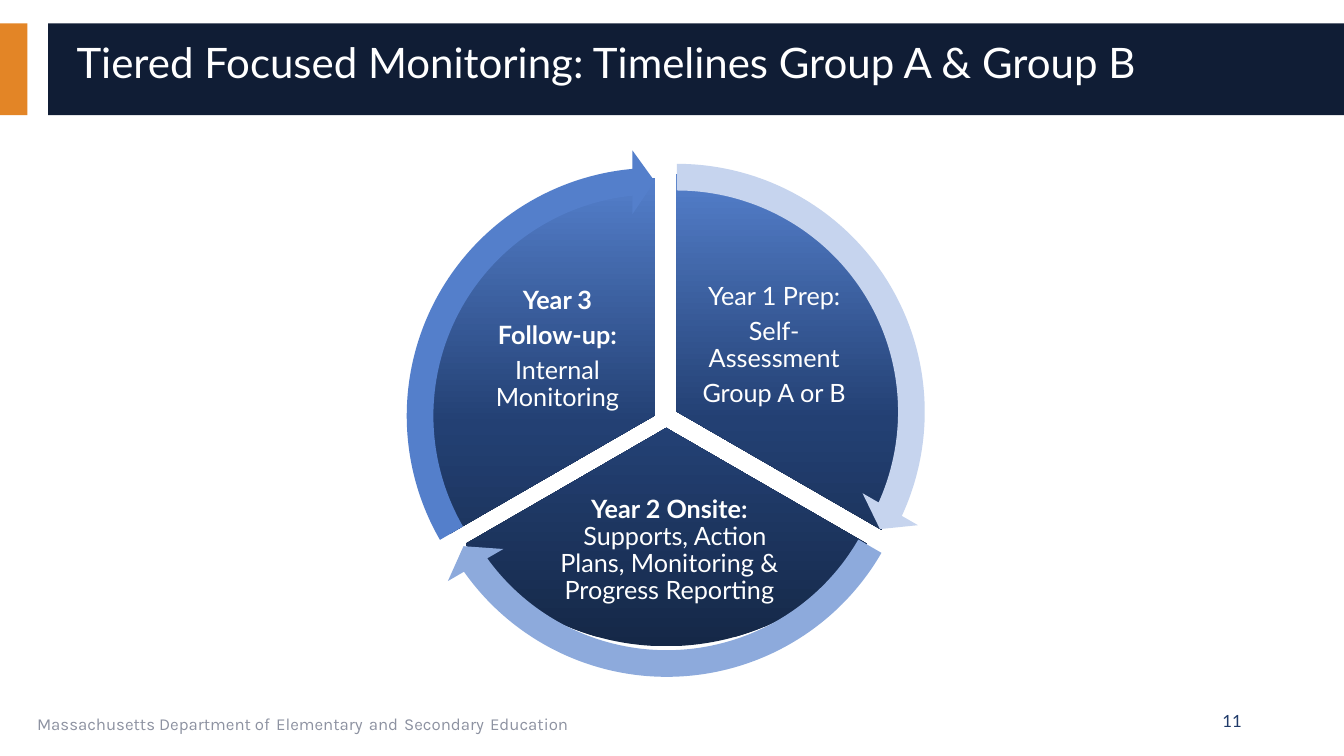
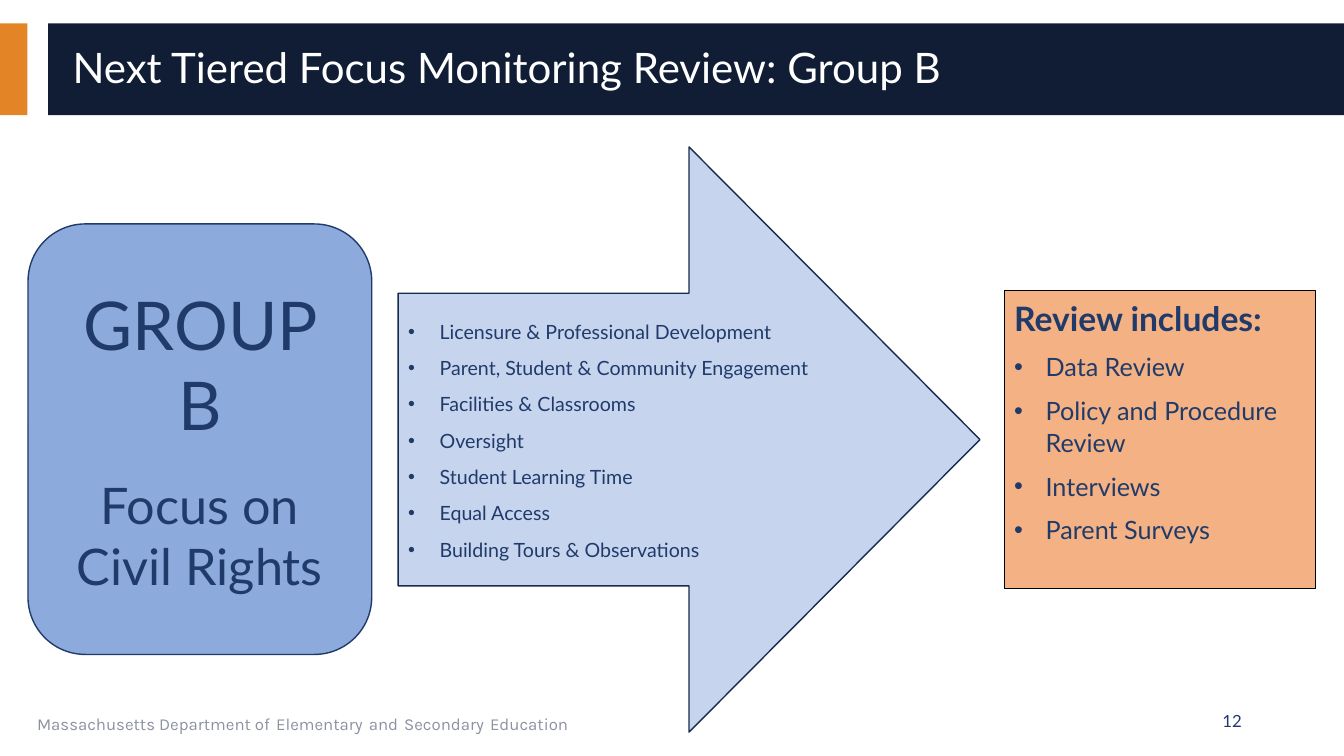
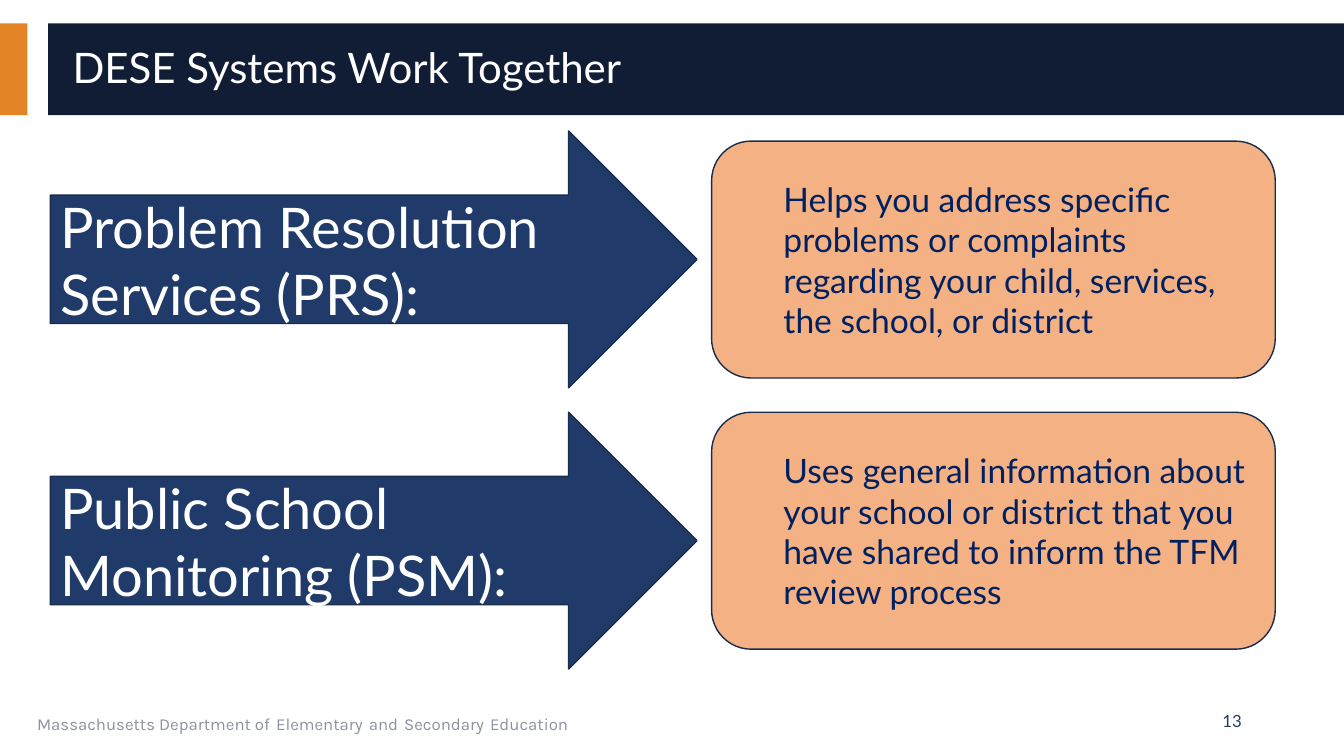
"""Build three slides on tiered focused monitoring."""
from copy import deepcopy
from dataclasses import dataclass
from typing import Any

from lxml import etree
from pptx import Presentation
from pptx import util as u
from pptx.dml.color import RGBColor
from pptx.enum import shapes, text
from pptx.oxml.ns import qn

Pt = u.Pt
SHAPE = shapes.MSO_SHAPE
CENTER, RIGHT = text.PP_ALIGN.CENTER, text.PP_ALIGN.RIGHT
TOP, MIDDLE = text.MSO_ANCHOR.TOP, text.MSO_ANCHOR.MIDDLE
C = {
    "white": "FFFFFF", "orange": "E38526", "band": "101D35", "grey": "8D92A1",
    "navy": "203B6A", "outline": "182C4E", "black": "000000", "ink": "002060",
    "peach": "F4B183", "pale": "C6D4EE", "mid": "8DAADC", "strong": "547FCB",
    "deep": "152847", "blue": "234073",
}
PIE_STOPS = ((0, "deep"), (0.48, "blue"), (1, "strong"))
FULL_TURN, THIRD, TIP = 216, 72, 3.28


@dataclass
class Run:
    """A stretch of text with one size, colour and font."""
    words: str
    size: float = 18
    color: str = "navy"
    bold: bool = False
    font: str = "Lato"


@dataclass
class Para:
    """A paragraph with its spacing, indents and bullet."""
    runs: list[Run]
    align: Any = None
    spacing: float = 1
    before: float = 0
    after: float = 0
    left: float = 0
    indent: float = 0
    bullet: bool = False


@dataclass
class Box:
    """A rectangle in points."""
    x: float
    y: float
    w: float
    h: float

    def place(self) -> tuple[int, ...]:
        return tuple(Pt(v) for v in (self.x, self.y, self.w, self.h))


@dataclass
class Sector:
    """One year of the cycle: pie, label and arrow."""
    start: float
    pie: Box
    label: Box
    arrow: tuple[float, float]
    color: str
    paras: list[Para]


def rgb(name: str) -> RGBColor:
    """Return a named colour."""
    return RGBColor.from_string(C[name])


def apply(obj: Any, fmt: dict[str, Any]) -> None:
    """Set every attribute in a dict of format values."""
    for name, value in fmt.items():
        setattr(obj, name, value)


def write(tf: Any, paras: list[Para], anchor: Any = MIDDLE, inset: float | None = None) -> None:
    """Fill a text frame with paragraphs."""
    apply(tf, {"word_wrap": True, "vertical_anchor": anchor,
               "auto_size": text.MSO_AUTO_SIZE.NONE})
    if inset is not None:
        sides = ("left", "top", "right", "bottom")
        apply(tf, {f"margin_{side}": Pt(inset) for side in sides})
    for i, para in enumerate(paras):
        p = tf.paragraphs[0] if i == 0 else tf.add_paragraph()
        apply(p, {"alignment": para.align or text.PP_ALIGN.LEFT, "line_spacing": para.spacing,
                  "space_before": Pt(para.before), "space_after": Pt(para.after)})
        pPr = p._p.get_or_add_pPr()
        pPr.set("marL", str(Pt(para.left)))
        pPr.set("indent", str(Pt(para.indent)))
        if para.bullet:
            etree.SubElement(pPr, qn("a:buFont")).set("typeface", "Arial")
            etree.SubElement(pPr, qn("a:buChar")).set("char", "•")
        for run in para.runs:
            r = p.add_run()
            r.text = run.words
            apply(r.font, {"size": Pt(run.size), "name": run.font, "bold": run.bold})
            r.font.color.rgb = rgb(run.color)


def add_text(s: Any, box: Box, paras: list[Para], **kw: Any) -> Any:
    """Add a text box."""
    sp = s.shapes.add_textbox(*box.place())
    write(sp.text_frame, paras, **kw)
    return sp


def add_shape(s: Any, kind: Any, box: Box, fill: str | None, line: str | None = None,
              width: float = 1, adjust: tuple[float, ...] = ()) -> Any:
    """Add a preset shape; with no fill name it gets the pie gradient."""
    sp = s.shapes.add_shape(kind, *box.place())
    sp.shadow.inherit = False
    for i, value in enumerate(adjust):
        sp.adjustments[i] = value
    if fill:
        sp.fill.solid()
        sp.fill.fore_color.rgb = rgb(fill)
    else:
        sp.fill.gradient()
        sp.fill.gradient_angle = 90
        stops = sp._element.spPr.find(qn("a:gradFill")).find(qn("a:gsLst"))
        stops.append(deepcopy(stops[0]))
        for stop, (position, color) in zip(sp.fill.gradient_stops, PIE_STOPS):
            stop.position = position
            stop.color.rgb = rgb(color)
    if line:
        sp.line.color.rgb = rgb(line)
        sp.line.width = Pt(width)
    else:
        sp.line.fill.background()
    return sp


def move_frame_to_layout(s: Any) -> None:
    """Draw bands and footer once and keep them on the layout."""
    runs: list[Run] = []
    for part in ("Massachusetts Department of", "Elementary", "and", "Secondary", "Education"):
        if runs:
            runs.append(Run(" ", font="Karla"))
        runs.append(Run(part, 12, "grey", font="Karla"))
    parts = [
        add_shape(s, SHAPE.RECTANGLE, Box(0, 16.7, 19.6, 65.5), "orange"),
        add_shape(s, SHAPE.RECTANGLE, Box(34.3, 16.7, 925.7, 65.5), "band"),
        add_text(s, Box(19.4, 500.4, 607.7, 28.8), [Para(runs)], anchor=TOP),
    ]
    for sp in parts:
        s.slide_layout.shapes.element.append(sp._element)


def new_slide(prs: Any, title: str, number: int, x: float = 44.6, y: float = 23) -> Any:
    """Add a slide with its title and number."""
    s = prs.slides.add_slide(prs.slide_layouts[5])
    sp = s.shapes.title
    apply(sp, dict(zip(("left", "top", "width", "height"), Box(x, y, 895.7, 53.3).place())))
    write(sp.text_frame, [Para([Run(title, 30, "white")], spacing=0.9)])
    add_text(s, Box(678.2, 500.4, 216, 28.8), [Para([Run(str(number), 12)], RIGHT)])
    return s


def label(words: str, bold: bool = False, after: float = 5.7, indent: float = 0) -> Para:
    """Return a centred line for the cycle."""
    return Para([Run(words, 18, "white", bold)], CENTER, 0.9, after=after, indent=indent)


def bullets(items: list[str], size: float) -> list[Para]:
    """Return bulleted paragraphs."""
    return [Para([Run(item, size)], spacing=1.07, after=8, left=22.5, indent=-22.5, bullet=True)
            for item in items]


def cycle_slide(prs: Any) -> None:
    """Draw the three-year cycle."""
    s = new_slide(prs, "Tiered Focused Monitoring: Timelines Group A & Group B", 11, 47.5, 19.4)
    move_frame_to_layout(s)
    sectors = [
        Sector(162, Box(313.9, 124.6, 338.4, 338.4), Box(492.5, 196.6, 121, 100.8),
               (293, 103.7), "pale",
               [label("Year 1 Prep:"), label("Self- Assessment"),
                label("Group A or B", indent=-13)]),
        Sector(18, Box(306.7, 149.8, 338.4, 311.8), Box(387.4, 352.8, 181.4, 81.4),
               (285.8, 115.9), "mid",
               [label("Year 2 Onsite:", True, 0),
                label("Supports, Action Plans, Monitoring &", after=0, indent=8),
                label("Progress Reporting", after=0)]),
        Sector(90, Box(298.8, 127.4, 338.4, 338.4), Box(337.7, 199.4, 121, 100.8),
               (277.2, 106.6), "strong",
               [label("Year 3", True), label("Follow-up:", True), label("Internal Monitoring")]),
    ]
    for sector in sectors:
        end = (sector.start + THIRD) % FULL_TURN
        add_shape(s, SHAPE.PIE, sector.pie, None, adjust=(sector.start, end))
        add_text(s, sector.label, sector.paras, inset=2)
    for sector in sectors:
        end = (sector.start + THIRD) % FULL_TURN
        add_shape(s, SHAPE.CIRCULAR_ARROW, Box(*sector.arrow, 380.9, 380.9), sector.color,
                  adjust=(0.05, TIP, end - TIP, sector.start, 0.06))


def group_slide(prs: Any) -> None:
    """Draw the Group B review."""
    s = new_slide(prs, "Next Tiered Focus Monitoring Review: Group B", 12)
    sp = add_shape(s, SHAPE.RECTANGLE, Box(717.3, 207.4, 222.7, 213), "peach", "black", 0.75)
    heading = Para([Run("Review includes:", 24, bold=True)], spacing=1.07, after=8)
    items = ["Data Review", "Policy and Procedure Review", "Interviews", "Parent Surveys"]
    write(sp.text_frame, [heading] + bullets(items, 18), TOP)

    sp = add_shape(s, SHAPE.ROUNDED_RECTANGLE, Box(20, 160, 245.5, 307.5), "mid", "navy")
    write(sp.text_frame, [Para([Run("GROUP B", 48)], CENTER),
                          Para([Run("Focus on Civil Rights", 36)], CENTER, before=21.6)])

    sp = add_shape(s, SHAPE.RIGHT_ARROW, Box(284.4, 105, 415.6, 418), "pale", "outline")
    write(sp.text_frame, bullets([
        "Licensure & Professional Development", "Parent, Student & Community Engagement",
        "Facilities & Classrooms", "Oversight", "Student Learning Time", "Equal Access",
        "Building Tours & Observations"], 14))


def systems_slide(prs: Any) -> None:
    """Draw the two systems and what they do."""
    s = new_slide(prs, "DESE Systems Work Together", 13)
    rows = [
        ("Problem Resolution Services (PRS):",
         "Helps you address specific problems or complaints regarding your child, services, "
         "the school, or district"),
        ("Public School Monitoring (PSM):",
         "Uses general information about your school or district that you have shared to "
         "inform the TFM review process"),
    ]
    for i, (name, purpose) in enumerate(rows):
        sp = add_shape(s, SHAPE.RIGHT_ARROW, Box(36, 93.6 + i * 200.9, 461.8, 183.4),
                       "navy", "outline")
        write(sp.text_frame, [Para([Run(name, 40, "white")])])
        sp = add_shape(s, SHAPE.ROUNDED_RECTANGLE, Box(508.3, 100.8 + i * 193.7, 402.6, 169.2),
                       "peach", "outline")
        write(sp.text_frame, [Para([Run(purpose, 24, "ink")], left=36)])


def main() -> None:
    """Build and save the presentation."""
    prs = Presentation()
    apply(prs, {"slide_width": Pt(960), "slide_height": Pt(540)})
    for build in (cycle_slide, group_slide, systems_slide):
        build(prs)
    prs.save("out.pptx")


if __name__ == "__main__":
    main()
